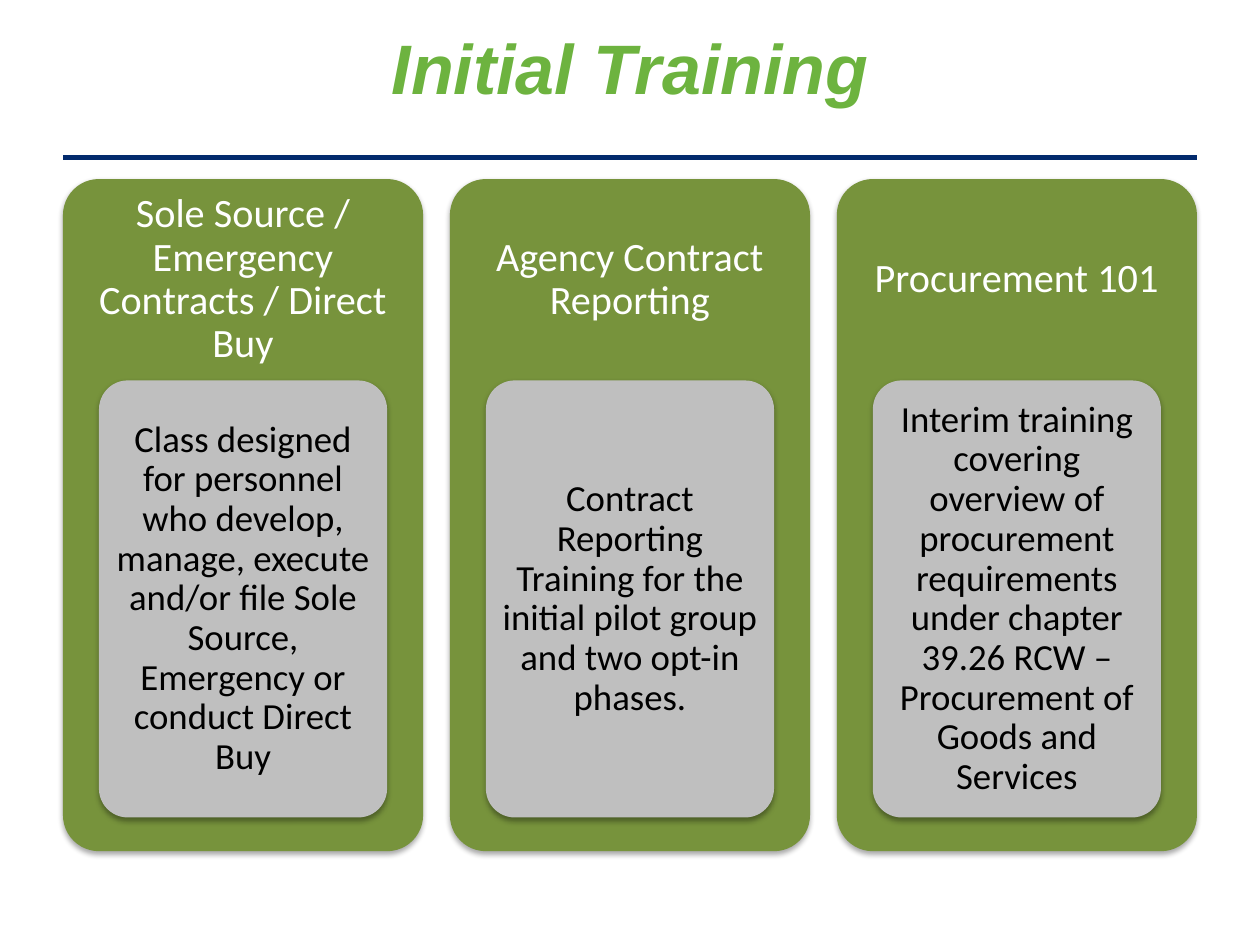
from dataclasses import dataclass

from lxml import etree
from pptx import Presentation, util as u
from pptx.dml.color import RGBColor
from pptx.enum import shapes, text
from pptx.oxml import parse_xml
from pptx.oxml.ns import nsdecls, qn

TITLE_GREEN = RGBColor(0x6D, 0xB3, 0x3F)
NAVY = RGBColor(0x03, 0x2B, 0x6D)
CARD_GREEN = RGBColor(0x77, 0x93, 0x3C)
PANEL_GREY = RGBColor(0xBF, 0xBF, 0xBF)
WHITE = RGBColor(0xFF, 0xFF, 0xFF)
BLACK = RGBColor(0x00, 0x00, 0x00)

SHADOW = (
    f'<a:effectLst {nsdecls("a")}>'
    '<a:outerShdw blurRad="40000" dist="23000" dir="5400000" rotWithShape="0">'
    '<a:srgbClr val="000000"><a:alpha val="35000"/></a:srgbClr>'
    "</a:outerShdw></a:effectLst>"
)


@dataclass(frozen=True)
class Box:
    """A rectangle, in centimetres."""

    left: float
    top: float
    width: float
    height: float

    def inset(self, side: float) -> "Box":
        return Box(self.left + side, self.top + side,
                   self.width - 2 * side, self.height - 2 * side)

    def lengths(self) -> tuple[u.Cm, ...]:
        return tuple(u.Cm(n) for n in (self.left, self.top, self.width, self.height))


@dataclass(frozen=True)
class Course:
    heading: str
    description: str


COURSES = (
    Course("Sole Source / Emergency Contracts / Direct Buy",
           "Class designed for personnel who develop, manage, execute and/or file "
           "Sole Source, Emergency or conduct Direct Buy"),
    Course("Agency Contract Reporting",
           "Contract Reporting Training for the initial pilot group and two opt-in phases."),
    Course("Procurement 101",
           "Interim training covering overview of procurement requirements under "
           "chapter 39.26 RCW – Procurement of Goods and Services"),
)

MARGIN = 1.27
CONTENT_WIDTH = 22.86
CARD_WIDTH = 7.26
CARD_PITCH = (CONTENT_WIDTH - CARD_WIDTH) / (len(COURSES) - 1)
CARD_TOP = 3.61
HEADING_HEIGHT = 4.06


def add_rounded(container, box: Box, colour: RGBColor) -> None:
    shape = container.add_shape(shapes.MSO_SHAPE.ROUNDED_RECTANGLE, *box.lengths())
    shape.adjustments[0] = 0.1
    shape.fill.solid()
    shape.fill.fore_color.rgb = colour
    shape.line.fill.background()
    shape._element.spPr.append(parse_xml(SHADOW))


def add_text(container, box: Box, wording: str, size: float, colour: RGBColor,
             insets: tuple[float, float], font: str = "Calibri"):
    frame = container.add_textbox(*box.lengths()).text_frame
    frame.word_wrap = True
    frame.vertical_anchor = text.MSO_ANCHOR.MIDDLE
    frame.margin_left = frame.margin_right = u.Cm(insets[0])
    frame.margin_top = frame.margin_bottom = u.Cm(insets[1])
    paragraph = frame.paragraphs[0]
    paragraph.text = wording
    paragraph.alignment = text.PP_ALIGN.CENTER
    paragraph.font.name = font
    paragraph.font.size = u.Pt(size)
    paragraph.font.color.rgb = colour
    return frame


def add_course(container, course: Course, left: float) -> None:
    add_rounded(container, Box(left, CARD_TOP, CARD_WIDTH, 13.55), CARD_GREEN)
    heading = add_text(container, Box(left, CARD_TOP, CARD_WIDTH, HEADING_HEIGHT),
                       course.heading, 23, WHITE, (0.25, 0.25))
    panel = Box(left + 0.1 * CARD_WIDTH, CARD_TOP + HEADING_HEIGHT, 0.8 * CARD_WIDTH, 8.81)
    add_rounded(container, panel, PANEL_GREY)
    description = add_text(container, panel.inset(0.17), course.description,
                           21, BLACK, (0.15, 0.1))
    for frame in (heading, description):
        frame.paragraphs[0].line_spacing = 0.9


def main() -> None:
    presentation = Presentation()
    presentation.slide_width, presentation.slide_height = u.Cm(25.4), u.Cm(19.05)
    slide = presentation.slides.add_slide(presentation.slide_layouts[6])

    # Rule below the title
    rule = slide.shapes.add_connector(shapes.MSO_CONNECTOR.STRAIGHT, u.Cm(MARGIN), u.Cm(3.18),
                                      u.Cm(MARGIN + CONTENT_WIDTH), u.Cm(3.18))
    rule.line.color.rgb = NAVY
    rule.line.width = u.Pt(3)
    etree.SubElement(rule._element.spPr, qn("a:effectLst"))

    # Title
    title = add_text(slide.shapes, Box(MARGIN, 0.2, CONTENT_WIDTH, 2.54), "Initial Training",
                     40, TITLE_GREEN, (0.25, 0.3), "Arial")
    title.vertical_anchor = text.MSO_ANCHOR.TOP
    title.paragraphs[0].font.bold = title.paragraphs[0].font.italic = True

    # Course cards
    cards = slide.shapes.add_group_shape().shapes
    for index, course in enumerate(COURSES):
        add_course(cards, course, MARGIN + index * CARD_PITCH)

    presentation.save("out.pptx")


if __name__ == "__main__":
    main()
